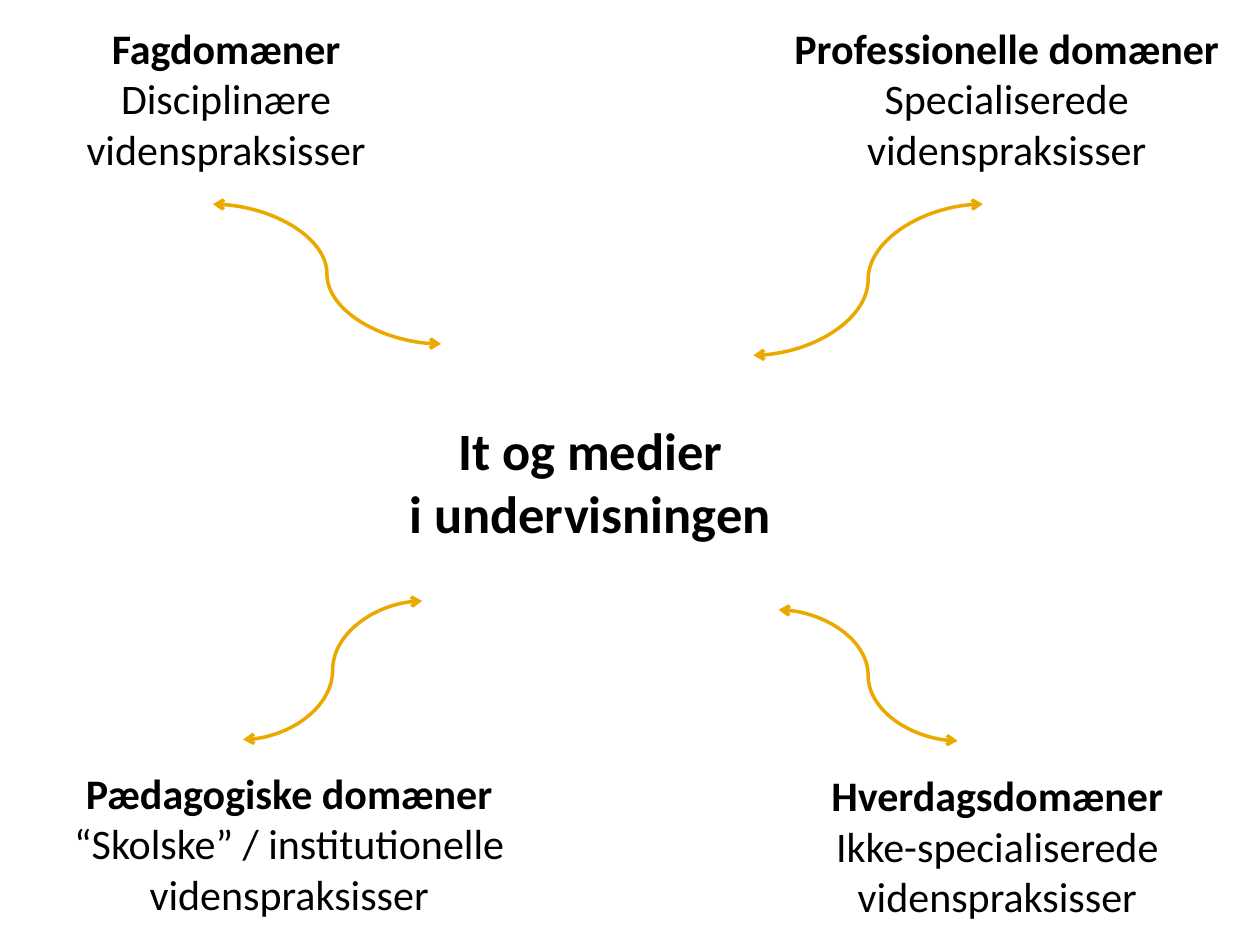
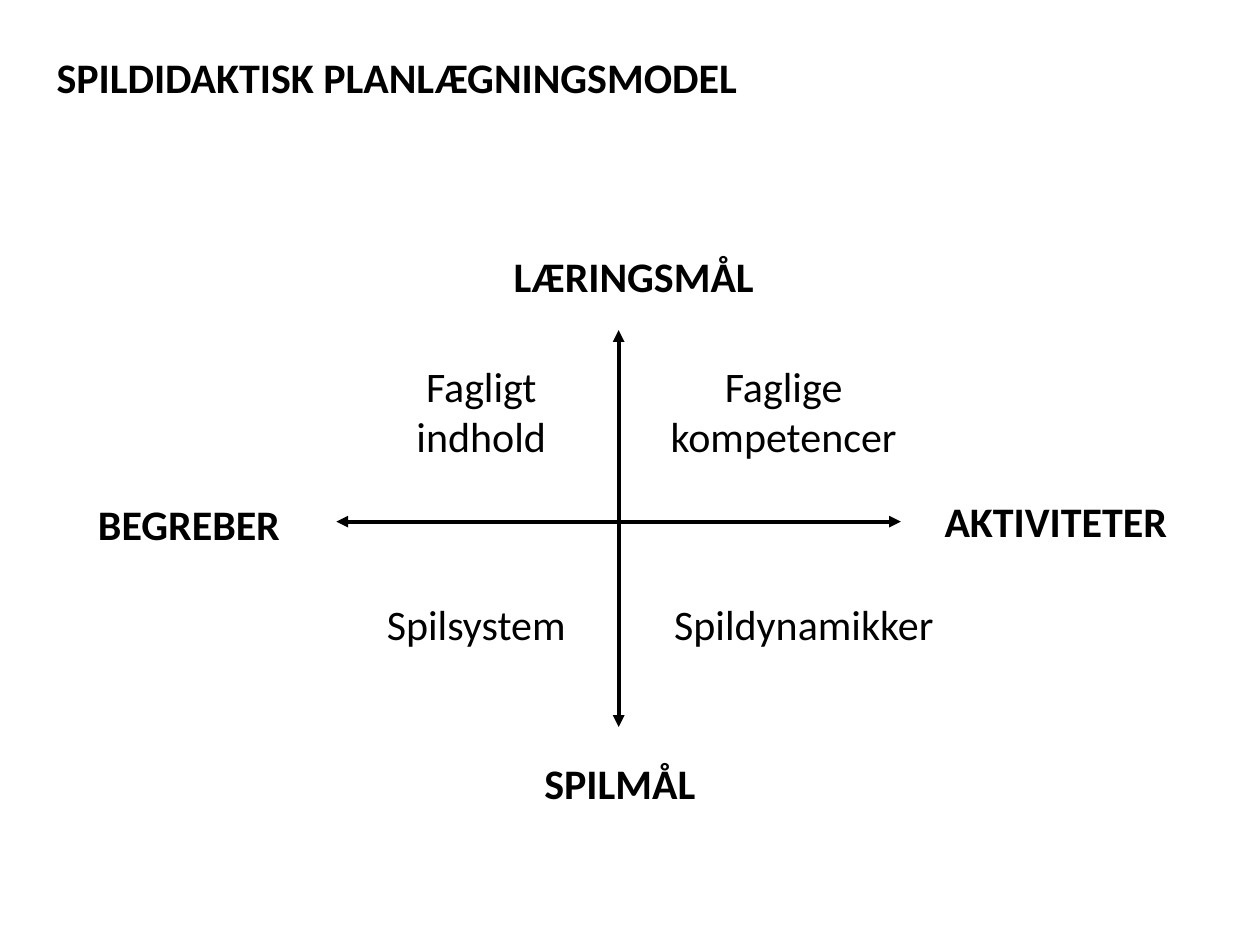
from lxml import etree
from pptx import Presentation
from pptx.dml.color import RGBColor
from pptx.enum import shapes, text
from pptx.oxml.ns import qn
from pptx.util import Inches, Pt

FONT = "Calibri"
BLACK = "000000"
GOLD = "EBA900"
BODY_SIZE = 24
CENTER_SIZE = 30


def color(hex_value):
    return RGBColor.from_string(hex_value)


def add_text(slide, box, lines, size=BODY_SIZE, align=text.PP_ALIGN.CENTER):
    """Write (words, bold) lines as one paragraph with line breaks."""
    tb = slide.shapes.add_textbox(*map(Inches, box))
    tf = tb.text_frame
    tf.word_wrap = True
    p = tf.paragraphs[0]
    p.alignment = align
    for i, (words, bold) in enumerate(lines):
        if i:
            p.add_line_break()
        r = p.add_run()
        r.text = words
        r.font.name = FONT
        r.font.size = Pt(size)
        r.font.bold = bold
        r.font.color.rgb = color(BLACK)


def add_double_arrow(slide, kind, start, end, line_color, width, head):
    cx = slide.shapes.add_connector(kind, *map(Inches, (*start, *end)))
    cx.line.color.rgb = color(line_color)
    cx.line.width = Pt(width)
    ln = cx.line._get_or_add_ln()
    for tag in ("a:headEnd", "a:tailEnd"):
        etree.SubElement(ln, qn(tag), type=head)
    etree.SubElement(cx._element.spPr, qn("a:effectLst"))


def add_domain_map(slide, box):
    """Place four domains in the corners, each linked to the middle."""
    left, top, _, _ = box
    domains = [
        ((0.43, 0.13, 2.73, 1.31), "Fagdomæner",
         ["Disciplinære", "videnspraksisser"], (1.69, 1.62), (3.5, 2.73)),
        ((6.1, 0.13, 3.78, 1.31), "Professionelle domæner",
         ["Specialiserede", "videnspraksisser"], (7.8, 1.62), (5.98, 2.82)),
        ((0.22, 6.04, 4.15, 1.31), "Pædagogiske domæner",
         ["“Skolske” / institutionelle", "videnspraksisser"],
         (1.93, 5.87), (3.35, 4.77)),
        ((6.42, 6.06, 2.99, 1.31), "Hverdagsdomæner",
         ["Ikke-specialiserede", "videnspraksisser"],
         (7.6, 5.88), (6.18, 4.84)),
    ]
    for (x, y, w, h), name, practices, outer, inner in domains:
        lines = [(name, True)] + [(words, False) for words in practices]
        add_text(slide, (left + x, top + y, w, h), lines)
        start, end = ((left + px, top + py) for px, py in (outer, inner))
        add_double_arrow(slide, shapes.MSO_CONNECTOR.CURVE, start, end,
                         GOLD, 2, "arrow")
    add_text(slide, (left + 2.4, top + 3.27, 4.57, 1.11),
             [("It og medier", True), ("i undervisningen", True)], CENTER_SIZE)


def add_planning_cross(slide, box):
    """Draw two crossing axes, with labels at their ends and in the quadrants."""
    left, top, width, height = box
    mid_x, mid_y = left + width / 2, top + 1.52
    axes = [((left, mid_y), (left + width, mid_y)),
            ((mid_x, top), (mid_x, top + height))]
    for start, end in axes:
        add_double_arrow(slide, shapes.MSO_CONNECTOR.STRAIGHT, start, end,
                         BLACK, 2.25, "triangle")

    # Label centre and top, measured from the crossing point
    labels = [
        (0.12, -2.2, True, ["LÆRINGSMÅL"]),
        (0.01, 1.82, True, ["SPILMÅL"]),
        (3.47, -0.26, True, ["AKTIVITETER"]),
        (-3.41, -0.23, True, ["BEGREBER"]),
        (-1.09, -1.33, False, ["Fagligt", "indhold"]),
        (1.31, -1.33, False, ["Faglige", "kompetencer"]),
        (-1.13, 0.56, False, ["Spilsystem"]),
        (1.47, 0.56, False, ["Spildynamikker"]),
    ]
    label_w = 2.76
    for dx, dy, bold, words in labels:
        label_box = (mid_x + dx - label_w / 2, mid_y + dy,
                     label_w, 0.1 + 0.4 * len(words))
        add_text(slide, label_box, [(word, bold) for word in words])


def main():
    prs = Presentation()
    prs.slide_width, prs.slide_height = Inches(10), Inches(7.5)
    blank = prs.slide_layouts[6]

    add_domain_map(prs.slides.add_slide(blank), (0, 0, 10, 7.5))

    s = prs.slides.add_slide(blank)
    add_text(s, (0.35, 0.36, 6.81, 0.5),
             [("SPILDIDAKTISK PLANLÆGNINGSMODEL", True)],
             align=text.PP_ALIGN.LEFT)
    add_planning_cross(s, (2.67, 2.62, 4.48, 3.15))

    prs.save("out.pptx")


if __name__ == "__main__":
    main()
